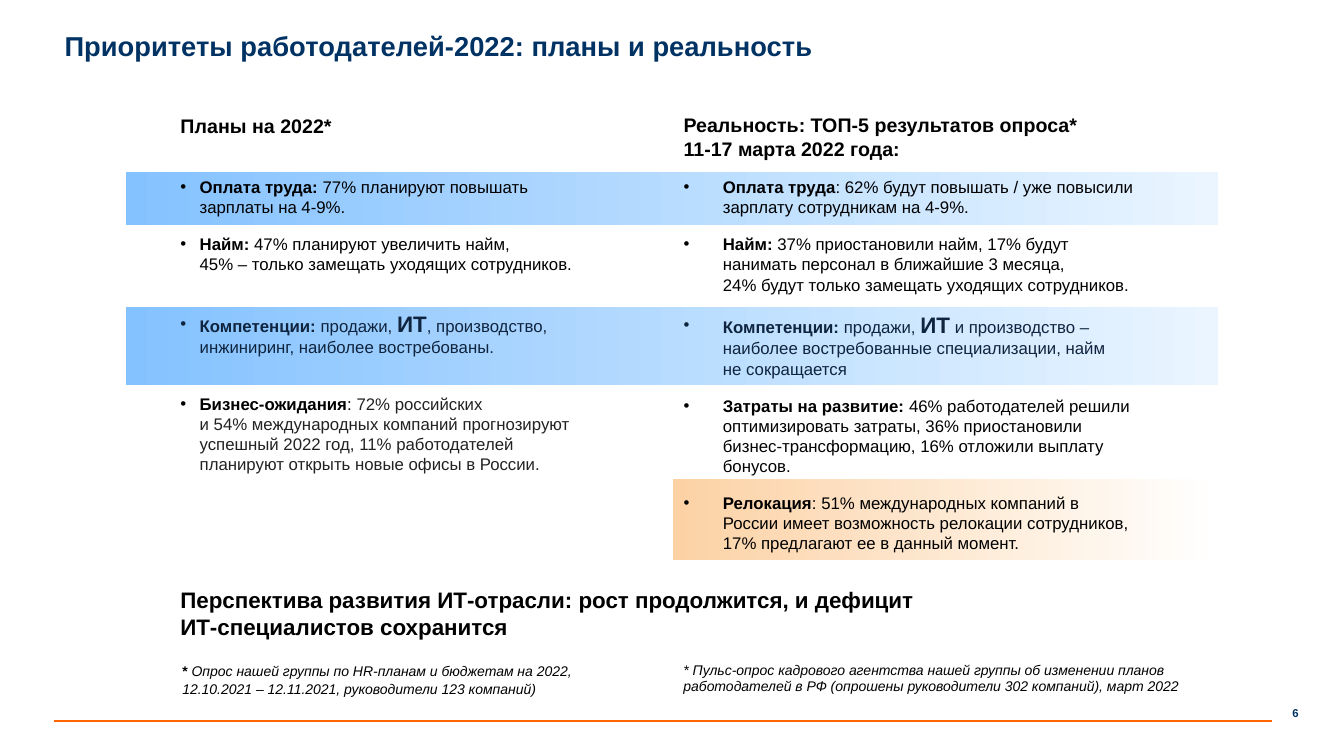
import pptx
import pptx.util
import pptx.dml.color
import pptx.enum.shapes
import pptx.enum.text
import pptx.oxml.ns
import lxml.etree

WIDE, HIGH = 13.33, 7.5
COL, ROW = WIDE / 100, HIGH / 100
NAVY, INK, BLACK, GREY = "003264", "0F243E", "000000", "222222"
ORANGE = "FF6600"
SKY, PEACH = ("84C2FF", "EAF5FF"), ("FCD2A5", "FFFFFF")
ALIGN, ANCHOR = pptx.enum.text.PP_ALIGN, pptx.enum.text.MSO_ANCHOR
BOLD, BIG = {"bold": True}, {"bold": True, "size": 16}
DARK = {"color": INK}

HEADS = {
    "plan": "Планы на 2022*",
    "real": "Реальность: ТОП-5 результатов опроса* \n11-17 марта 2022 года:",
}
PLANS = [
    (12, [("Оплата труда: ", BOLD), ("77% планируют повышать зарплаты на 4-9%.", {})]),
    (25.8, [("Найм: ", BOLD),
            ("47% планируют увеличить найм, \n45% – только замещать уходящих сотрудников.", {})]),
    (25.8, [("Компетенции: ", BOLD | DARK), ("продажи, ", DARK), ("ИТ", BIG | DARK),
            (", производство, инжиниринг, наиболее востребованы.", DARK)]),
    (12, [("Бизнес-ожидания", BOLD), (": ", {}),
          ("72% российских \nи 54% международных компаний прогнозируют успешный 2022 год, "
           "11% работодателей планируют открыть новые офисы в России.", {"color": GREY})]),
]
FACTS = [
    (12, [("Оплата труда", BOLD),
          (": 62% будут повышать / уже повысили зарплату сотрудникам на 4-9%.", {})]),
    (12, [("Найм: ", BOLD),
          ("37% приостановили найм, 17% будут нанимать персонал в ближайшие 3 месяца, "
           "\n24% будут только замещать уходящих сотрудников.", {})]),
    (12, [("Компетенции: ", BOLD | DARK), ("продажи, ", DARK), ("ИТ", BIG | DARK),
          (" и производство – наиболее востребованные специализации, найм "
           "\nне сокращается", DARK)]),
    (12, [("Затраты на развитие: ", BOLD),
          ("46% работодателей решили оптимизировать затраты, 36% приостановили "
           "бизнес-трансформацию, 16% отложили выплату бонусов.", {})]),
    (12, [("Релокация", BOLD),
          (": 51% международных компаний в России имеет возможность релокации "
           "сотрудников, 17% предлагают ее в данный момент.", {})]),
]


def paint(code):
    """Turn a hex string into a colour."""
    return pptx.dml.color.RGBColor.from_string(code)


def grid(box):
    """Turn columns and rows into lengths on the slide."""
    return [pptx.util.Inches(n * unit) for n, unit in zip(box, (COL, ROW) * 2)]


def place(shape, box):
    """Move a shape to its grid box."""
    for name, value in zip(("left", "top", "width", "height"), grid(box)):
        setattr(shape, name, value)


def frame(shape, anchor=ANCHOR.TOP):
    """Set up the text frame of a shape."""
    text = shape.text_frame
    look = {"word_wrap": True, "auto_size": pptx.enum.text.MSO_AUTO_SIZE.NONE,
            "vertical_anchor": anchor}
    for name, value in look.items():
        setattr(text, name, value)
    return text


def write(par, parts, size, after=0, align=ALIGN.LEFT, line=1.0):
    """Fill a paragraph with formatted runs and line breaks."""
    look = {"alignment": align, "line_spacing": line,
            "space_before": pptx.util.Pt(0), "space_after": pptx.util.Pt(after)}
    for name, value in look.items():
        setattr(par, name, value)
    for text, extra in parts:
        style = {"size": size, "bold": False, "italic": False, "color": BLACK} | extra
        for row, piece in enumerate(text.split("\n")):
            if row:
                par.add_line_break()
                mark = lxml.etree.SubElement(par._p[-1], pptx.oxml.ns.qn("a:rPr"))
                mark.set("sz", str(int(style["size"] * 100)))
            run = par.add_run()
            run.text = piece
            font = {"name": "Arial", "size": pptx.util.Pt(style["size"]),
                    "bold": style["bold"], "italic": style["italic"]}
            for name, value in font.items():
                setattr(run.font, name, value)
            run.font.color.rgb = paint(style["color"])


def bullet(par, sign, hang):
    """Give a paragraph a hanging bullet, or none."""
    props = par._p.get_or_add_pPr()
    room = pptx.util.Inches(hang)
    props.set("marL", str(room))
    props.set("indent", str(-room))
    if sign:
        font = lxml.etree.SubElement(props, pptx.oxml.ns.qn("a:buFont"))
        font.set("typeface", "Arial")
        lxml.etree.SubElement(props, pptx.oxml.ns.qn("a:buChar")).set("char", sign)
    else:
        lxml.etree.SubElement(props, pptx.oxml.ns.qn("a:buNone"))


def band(slide, box, tones):
    """Draw a row band that fades from left to right."""
    shape = slide.shapes.add_shape(pptx.enum.shapes.MSO_SHAPE.RECTANGLE, *grid(box))
    shape.shadow.inherit = False
    shape.line.fill.background()
    shape.fill.gradient()
    shape.fill.gradient_angle = 0
    for stop, tone in zip(shape.fill.gradient_stops, tones):
        stop.color.rgb = paint(tone)
    tree = slide.shapes._spTree
    tree.remove(shape._element)
    tree.insert(2, shape._element)


def title(slide, box):
    """Write the slide title."""
    shape = slide.shapes.title
    place(shape, box)
    write(frame(shape, ANCHOR.MIDDLE).paragraphs[0],
          [("Приоритеты работодателей-2022: планы и реальность", BOLD | {"color": NAVY})], 19.5)


def column(shape, box, head, gap, items, hang, anchor):
    """Write a heading and its bullet list."""
    place(shape, box)
    text = frame(shape, anchor)
    first = text.paragraphs[0]
    bullet(first, "", 0)
    write(first, [(head, BOLD)], 14, gap)
    for after, parts in items:
        par = text.add_paragraph()
        bullet(par, "•", hang)
        write(par, parts, 12, after)


def note(slide, box, parts, size, **look):
    """Write a free line of text."""
    shape = slide.shapes.add_textbox(*grid(box))
    write(frame(shape).paragraphs[0], parts, size, **look)


def footer(slide, left, right, top):
    """Draw the bottom rule and the page number."""
    x, y, end, _ = grid((left, top, right, top))
    rule = slide.shapes.add_connector(pptx.enum.shapes.MSO_CONNECTOR.STRAIGHT, x, y, end, y)
    rule.line.color.rgb = paint(ORANGE)
    rule.line.width = pptx.util.Pt(1.5)
    lxml.etree.SubElement(rule._element.spPr, pptx.oxml.ns.qn("a:effectLst"))
    note(slide, (80.42, top - 2.53, 16.95, 3.2), [("6", BOLD | {"color": NAVY})], 8.1,
         align=ALIGN.RIGHT)


def main():
    """Build and save the slide."""
    deck = pptx.Presentation()
    deck.slide_width, deck.slide_height = pptx.util.Inches(WIDE), pptx.util.Inches(HIGH)
    slide = deck.slides.add_slide(deck.slide_layouts[3])
    for box, tones in (((9.38, 22.8, 81.24, 6.93), SKY),
                       ((50.04, 63.33, 40.66, 10.8), PEACH),
                       ((9.38, 40.67, 81.24, 10.27), SKY)):
        band(slide, box, tones)
    title(slide, (4.05, 3.33, 85.75, 5.47))
    plan, real = slide.placeholders[1], slide.placeholders[2]
    column(real, (50.11, 14, 35.11, 60.13), HEADS["real"], 12, FACTS, 0.39, ANCHOR.MIDDLE)
    column(plan, (12.68, 14.4, 31.06, 48.93), HEADS["plan"], 28, PLANS, 0.19, ANCHOR.TOP)
    slant = {"italic": True}
    note(slide, (50.11, 86.8, 38.41, 5.87),
         [("* Пульс-опрос кадрового агентства нашей группы об изменении планов "
           "работодателей в РФ (опрошены руководители 302 компаний), март 2022", slant)], 10)
    note(slide, (12.83, 86.8, 31.06, 5.87),
         [("* ", BOLD), ("Опрос нашей группы по HR-планам и бюджетам на 2022, "
                         "12.10.2021 – 12.11.2021, руководители 123 компаний)", slant)],
         10, after=6.5, line=1.07)
    note(slide, (12.68, 76.93, 56.86, 8.53),
         [("Перспектива развития ИТ-отрасли: рост продолжится, и дефицит "
           "ИТ-специалистов сохранится", BOLD)], 16)
    footer(slide, 4.05, 94.67, 95.33)
    deck.save("out.pptx")


if __name__ == "__main__":
    main()
